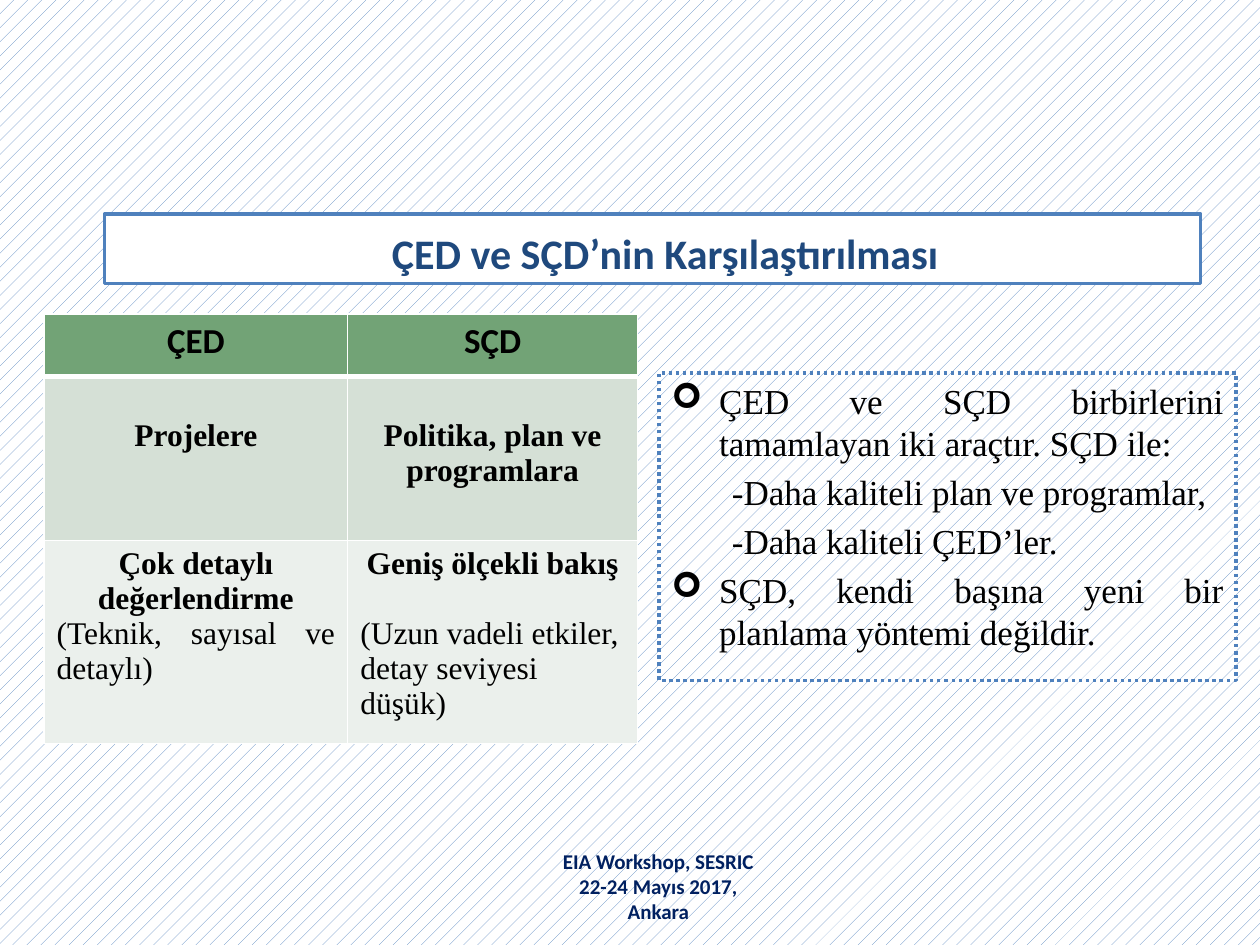
from dataclasses import dataclass

from lxml.etree import SubElement
from pptx import Presentation
from pptx.dml.color import RGBColor as RGB
from pptx.enum.dml import MSO_LINE as Dash, MSO_PATTERN as Pattern
from pptx.enum.shapes import MSO_SHAPE as Shape
from pptx.enum.text import MSO_ANCHOR as Anchor, PP_ALIGN as Align
from pptx.oxml import parse_xml
from pptx.oxml.ns import nsdecls, qn
from pptx.util import Inches, Pt


@dataclass(frozen=True)
class Theme:
    blue: str = "4F81BD"
    navy: str = "1F497D"
    foot: str = "002060"
    black: str = "000000"
    white: str = "FFFFFF"
    rows: tuple = ("72A376", "D5E0D6", "EBF0EC")
    sans: str = "Calibri"
    serif: str = "Times New Roman"
    title: int = 24
    body: int = 20
    cell: int = 18
    small: int = 12


T = Theme()


def color(code):
    return RGB.from_string(code)


def paint(fill, code):
    fill.solid()
    fill.fore_color.rgb = color(code)


def edge(shape, dash=None):
    shape.line.color.rgb = color(T.blue)
    shape.line.width = Pt(2)
    if dash:
        shape.line.dash_style = dash


def write(para, text, size, font, code=T.black, bold=False, align=Align.CENTER):
    para.alignment = align
    run = para.add_run()
    run.text = text
    run.font.size = Pt(size)
    run.font.name = font
    run.font.bold = bold
    run.font.color.rgb = color(code)


def indent(para, left, first, mark=None):
    """Set left and first-line indents, with a bullet if one is given."""
    props = para._p.get_or_add_pPr()
    props.set("marL", str(Inches(left)))
    props.set("indent", str(Inches(first)))
    if mark:
        SubElement(props, qn("a:buFont")).set("typeface", "Wingdings")
        SubElement(props, qn("a:buChar")).set("char", mark)
    else:
        SubElement(props, qn("a:buNone"))


def paras(frame, count):
    return [frame.paragraphs[0]] + [frame.add_paragraph() for _ in range(count - 1)]


def border(cell, top, bottom):
    """Draw white cell borders; left and right are one point wide."""
    props = cell._tc.get_or_add_tcPr()
    for spot, (side, width) in enumerate(zip("LRTB", (1, 1, top, bottom))):
        props.insert(spot, parse_xml(
            f'<a:ln{side} {nsdecls("a")} w="{Pt(width)}"><a:solidFill>'
            f'<a:srgbClr val="{T.white}"/></a:solidFill></a:ln{side}>'))


def add_title(slide):
    title = slide.shapes.title
    title.left, title.top = Inches(0.83), Inches(1.7)
    title.width, title.height = Inches(8.7), Inches(0.55)
    title._element.spPr.append(parse_xml(
        f'<a:prstGeom {nsdecls("a")} prst="roundRect"><a:avLst/></a:prstGeom>'))
    paint(title.fill, T.white)
    edge(title)
    title.text_frame.vertical_anchor = Anchor.MIDDLE
    para = title.text_frame.paragraphs[0]
    para.line_spacing = 1.15
    indent(para, 0, 0.2)
    write(para, "ÇED ve SÇD’nin Karşılaştırılması", T.title, T.sans, T.navy, True)


def add_grid(slide):
    C, J, L = Align.CENTER, Align.JUSTIFY, Align.LEFT
    # each cell: (text, bold, alignment, space before)
    rows = [
        [[("ÇED", True, C, 0)], [("SÇD", True, C, 0)]],
        [[("Projelere", True, C, 0)],
         [("Politika, plan ve programlara", True, C, 0)]],
        [[("Çok detaylı değerlendirme", True, C, 0),
          ("(Teknik, sayısal ve detaylı)", False, J, 0)],
         [("Geniş ölçekli bakış", True, C, 0),
          ("(Uzun vadeli etkiler, detay seviyesi düşük)", False, L, 20)]],
    ]
    table = slide.shapes.add_table(3, 2, Inches(0.35), Inches(2.49),
                                   Inches(4.71), Inches(3.41)).table
    for col, width in zip(table.columns, (2.41, 2.3)):
        col.width = Inches(width)
    for row, height in zip(table.rows, (0.5, 1.3, 1.61)):
        row.height = Inches(height)
    for r, row in enumerate(rows):
        size, font = (T.cell, T.serif) if r else (T.body, T.sans)
        for c, lines in enumerate(row):
            cell = table.cell(r, c)
            paint(cell.fill, T.rows[r])
            border(cell, 3 if r == 1 else 1, 1 if r else 3)
            cell.margin_top = Inches(0.33 if r == 1 else 0.05)
            for para, (text, bold, align, gap) in zip(
                    paras(cell.text_frame, len(lines)), lines):
                if gap:
                    para.space_before = Pt(gap)
                write(para, text, size, font, bold=bold, align=align)


def add_notes(slide):
    items = [
        ("ÇED ve SÇD birbirlerini tamamlayan iki araçtır. SÇD ile:", True),
        ("-Daha kaliteli plan ve programlar,", False),
        ("-Daha kaliteli ÇED’ler.", False),
        ("SÇD, kendi başına yeni bir planlama yöntemi değildir.", True),
    ]
    box = slide.shapes.add_shape(Shape.RECTANGLE, Inches(5.23), Inches(2.96),
                                 Inches(4.58), Inches(2.44))
    box.shadow.inherit = False
    box.fill.background()
    edge(box, Dash.ROUND_DOT)
    frame = box.text_frame
    frame.word_wrap = True
    frame.vertical_anchor = Anchor.TOP
    for i, (para, (text, main_item)) in enumerate(zip(paras(frame, len(items)), items)):
        para.line_spacing = Pt(24)
        if i:
            para.space_before = Pt(4)
        if main_item:
            indent(para, 0.38, -0.38, "➢")
        else:
            indent(para, 0.48, 0)
        write(para, text, T.body, T.serif, align=Align.JUSTIFY)


def add_foot(slide):
    box = slide.shapes.add_textbox(Inches(4.27), Inches(6.72),
                                   Inches(1.91), Inches(0.62))
    frame = box.text_frame
    frame.word_wrap = True
    frame.vertical_anchor = Anchor.MIDDLE
    lines = ("EIA Workshop, SESRIC", "22-24 Mayıs 2017, Ankara")
    for para, text in zip(paras(frame, len(lines)), lines):
        write(para, text, T.small, T.sans, T.foot, True)


def main():
    deck = Presentation()
    deck.slide_width, deck.slide_height = Inches(10), Inches(7.5)
    slide = deck.slides.add_slide(deck.slide_layouts[5])
    back = slide.background.fill
    back.patterned()
    back.pattern = Pattern.PERCENT_10
    back.fore_color.rgb = color(T.blue)
    back.back_color.rgb = color(T.white)
    add_notes(slide)
    add_grid(slide)
    add_title(slide)
    add_foot(slide)
    deck.save("out.pptx")


if __name__ == "__main__":
    main()
